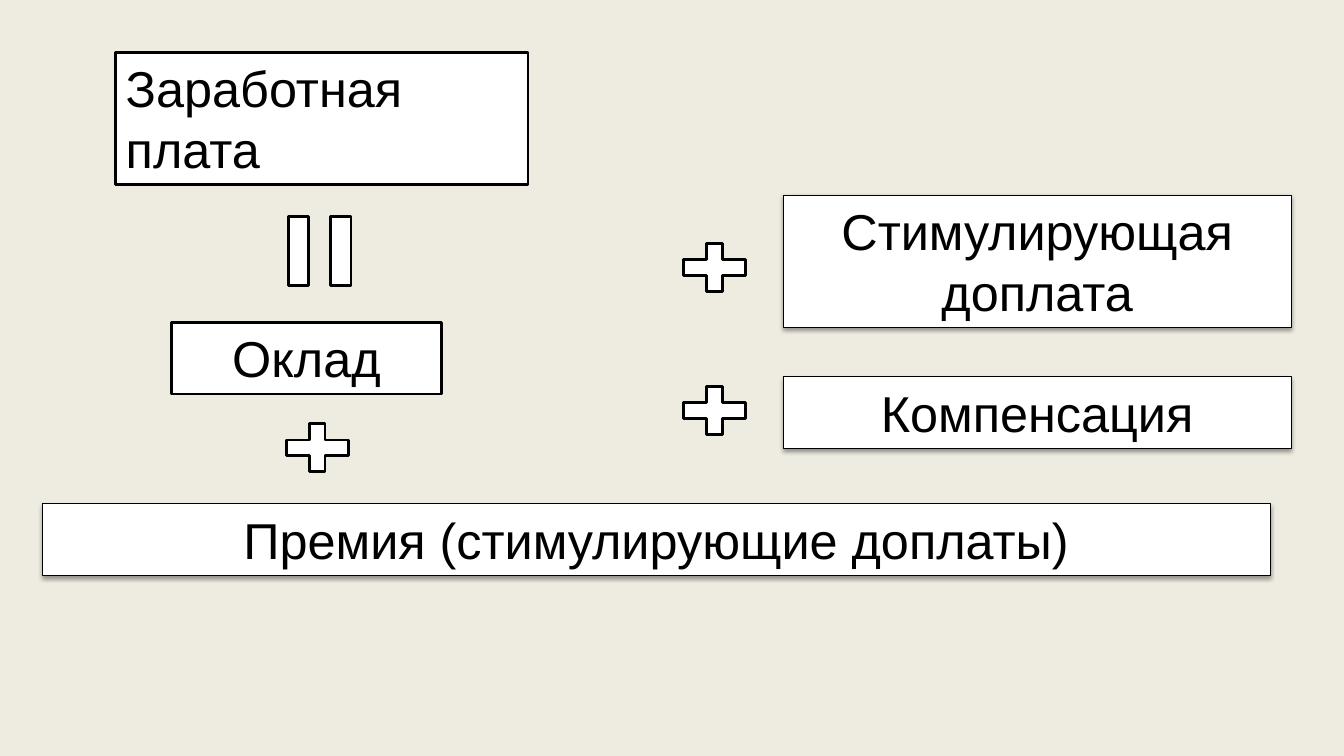
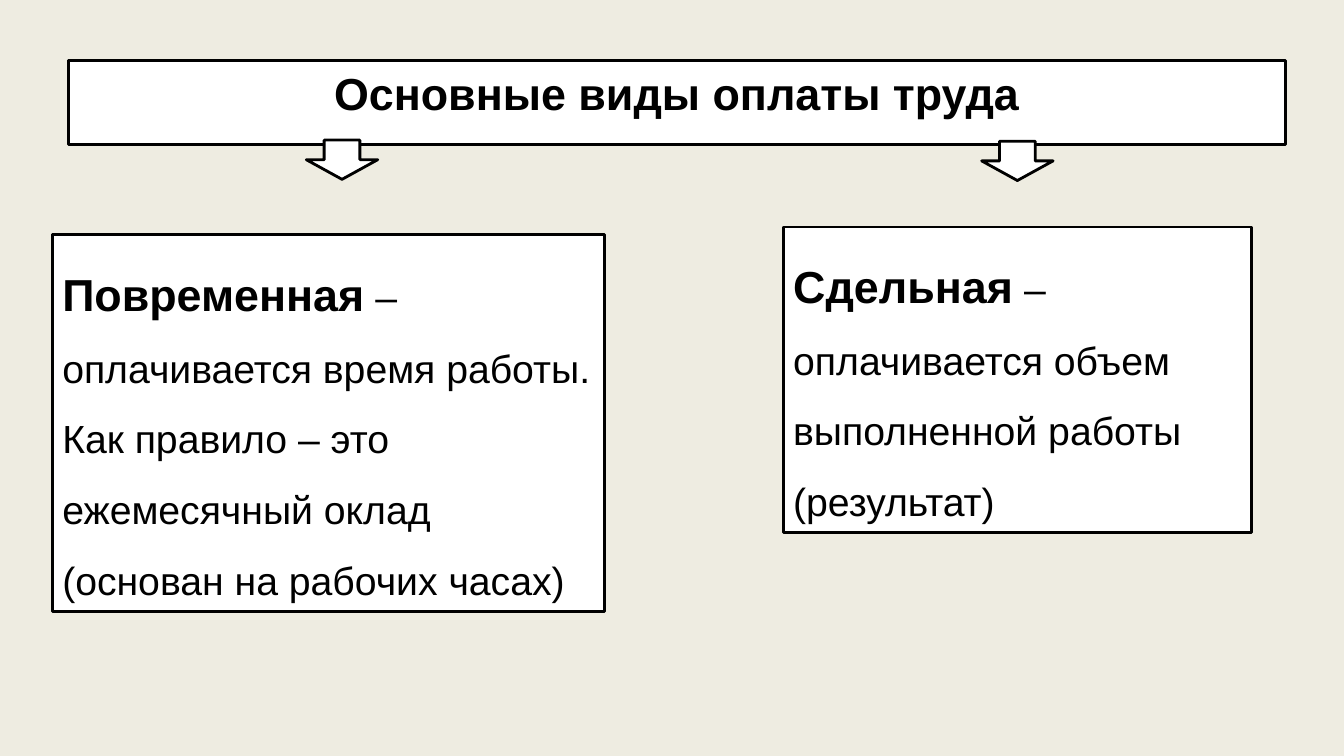
"""Builds two slides on the parts of a wage and the main kinds of pay."""
from lxml.etree import SubElement
from pptx import Presentation
from pptx.dml.color import RGBColor
from pptx.enum.shapes import MSO_SHAPE as Preset
from pptx.enum.text import MSO_ANCHOR as Anchor, MSO_AUTO_SIZE as AutoSize, PP_ALIGN as Align
from pptx.oxml.ns import qn
from pptx.util import Cm, Pt

COLORS = {name: RGBColor.from_string(value) for name, value in {
    "background": "EEECE1", "box": "FFFFFF", "ink": "000000"}.items()}
FONT = "Arial"
TITLE_LAYOUT, BLANK_LAYOUT = 5, 6


class Deck:
    """Holds the shared style and the current slide."""

    def __init__(self):
        self.prs = Presentation()
        self.prs.slide_width, self.prs.slide_height = Cm(33.87), Cm(19.05)
        fill = self.prs.slide_master.background.fill
        fill.solid()
        fill.fore_color.rgb = COLORS["background"]
        self.slide = None

    def new_slide(self, layout):
        self.slide = self.prs.slides.add_slide(self.prs.slide_layouts[layout])
        for extra in list(self.slide.placeholders):
            if extra != self.slide.shapes.title:
                extra.element.getparent().remove(extra.element)

    def paint(self, shape, line_width=2):
        shape.fill.solid()
        shape.fill.fore_color.rgb = COLORS["box"]
        shape.line.color.rgb = COLORS["ink"]
        shape.line.width = Pt(line_width)
        shape.shadow.inherit = False

    def add_text(self, shape, runs, align, spacing=1):
        frame = shape.text_frame
        frame.word_wrap = True
        frame.auto_size = AutoSize.SHAPE_TO_FIT_TEXT
        frame.vertical_anchor = Anchor.TOP
        paragraph = frame.paragraphs[0]
        paragraph.alignment = align
        paragraph.line_spacing = spacing
        for text, size, bold in runs:
            run = paragraph.add_run()
            run.text = text
            font = run.font
            font.name, font.size, font.bold = FONT, Pt(size), bold
            font.color.rgb = COLORS["ink"]

    def title(self, text, left, top, width, height):
        heading = self.slide.shapes.title
        heading.left, heading.top = Cm(left), Cm(top)
        heading.width, heading.height = Cm(width), Cm(height)
        self.paint(heading)
        self.add_text(heading, [(text, 32, True)], Align.CENTER)

    def sign(self, preset, left, top, width, height, line_width=2):
        shape = self.slide.shapes.add_shape(preset, Cm(left), Cm(top), Cm(width), Cm(height))
        self.paint(shape, line_width)
        return shape

    def plus(self, left, top):
        self.sign(Preset.MATH_PLUS, left, top, 2.13, 1.65)

    def equals(self, left, top, width, height):
        shape = self.sign(Preset.MATH_EQUAL, left, top, width, height)
        shape.rotation = 270
        shape.adjustments[0], shape.adjustments[1] = 0.17, 0.18

    def down_arrow(self, left, top):
        self.sign(Preset.DOWN_ARROW, left, top, 1.8, 0.99)

    def term(self, text, left, top, width, height, align=Align.CENTER, line_width=2):
        box = self.sign(Preset.RECTANGLE, left, top, width, height, line_width)
        self.add_text(box, [(text, 36, False)], align)
        return box

    def extra_pay(self, text, left, top, width, height):
        box = self.term(text, left, top, width, height, line_width=0.75)
        effects = box.element.spPr.find(qn("a:effectLst"))
        shadow = SubElement(effects, qn("a:outerShdw"), blurRad=str(Pt(3.1)),
                            dist=str(Pt(1.6)), dir="5400000", rotWithShape="0")
        tint = SubElement(shadow, qn("a:srgbClr"), val=str(COLORS["ink"]))
        SubElement(tint, qn("a:alpha"), val="38000")

    def definition(self, name, meaning, left, top, width, height):
        box = self.sign(Preset.RECTANGLE, left, top, width, height)
        self.add_text(box, [(name, 32, True), (meaning, 28, False)], Align.LEFT, 1.5)


def wage_parts(deck):
    deck.new_slide(BLANK_LAYOUT)
    one_line, two_lines = 1.8, 3.33
    right_left, right_width, right_plus = 19.74, 12.8, 16.94
    deck.extra_pay("Стимулирующая доплата", right_left, 4.93, right_width, two_lines)
    deck.term("Оклад", 4.32, 8.13, 6.81, one_line)
    deck.term("Заработная плата", 2.92, 1.32, 10.39, two_lines, Align.LEFT)
    deck.equals(6.86, 4.8, 2.39, 3.05)
    deck.plus(right_plus, 5.92)
    deck.plus(6.93, 10.46)
    deck.extra_pay("Премия (стимулирующие доплаты)", 1.07, 12.7, 30.94, one_line)
    deck.extra_pay("Компенсация", right_left, 9.5, right_width, one_line)
    deck.plus(right_plus, 9.52)


def pay_kinds(deck):
    deck.new_slide(TITLE_LAYOUT)
    deck.title("Основные виды оплаты труда", 1.73, 1.52, 30.66, 1.63)
    deck.definition("Повременная", " – оплачивается время работы. Как правило – это "
                    "ежемесячный оклад (основан на рабочих часах)", 1.32, 5.92, 13.92, 9.5)
    deck.definition("Сдельная", " – оплачивается объем выполненной работы (результат)",
                    19.74, 5.72, 11.81, 7.7)
    deck.down_arrow(7.72, 3.53)
    deck.down_arrow(24.74, 3.56)


def main():
    deck = Deck()
    wage_parts(deck)
    pay_kinds(deck)
    deck.prs.save("out.pptx")


if __name__ == "__main__":
    main()
